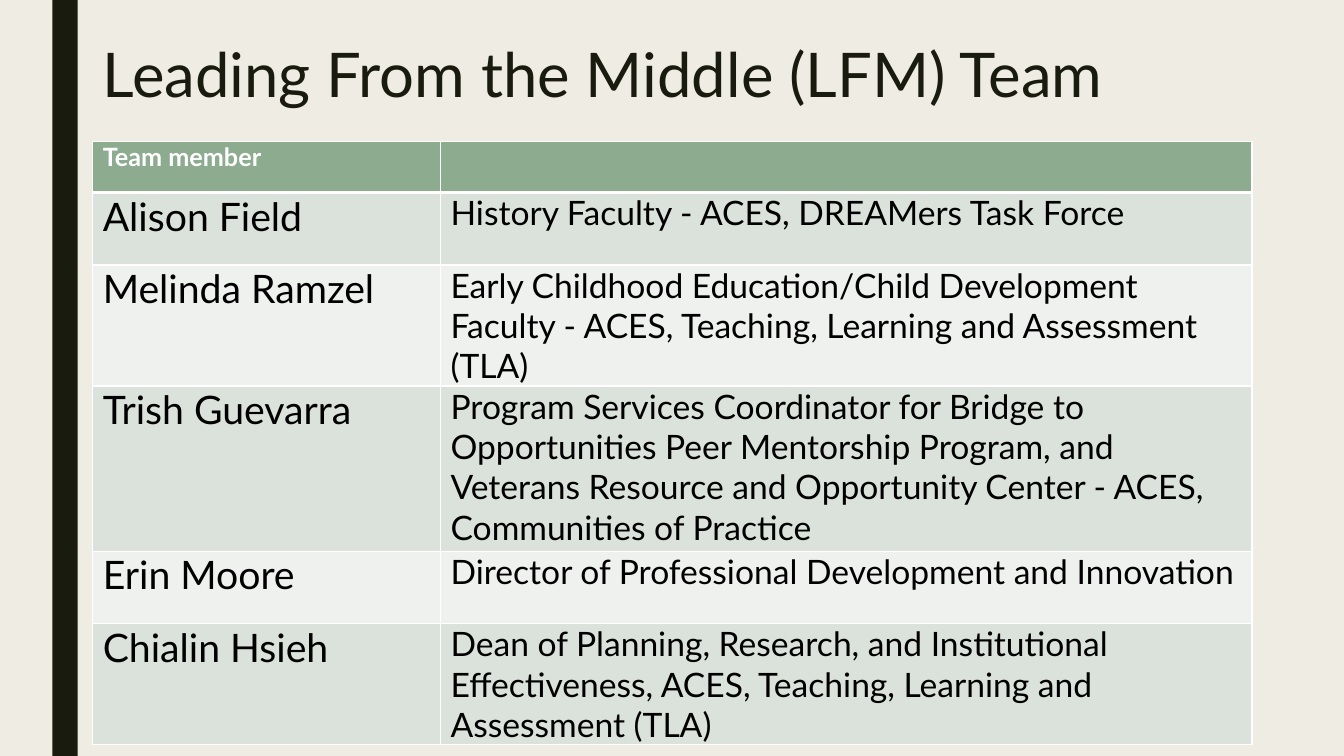
from typing import NamedTuple

from lxml.etree import SubElement
from pptx import Presentation
from pptx.dml.color import RGBColor
from pptx.enum.shapes import MSO_SHAPE as Shape
from pptx.enum.text import MSO_ANCHOR as Anchor
from pptx.oxml.ns import qn
from pptx.util import Pt

FONT = "Lato"
DARK, WHITE, BLACK = "191B0E", "FFFFFF", "000000"
HEADER_FILL = "8DAB8E"
BAND_FILLS = ("DBE2DB", "EEF1EE")
LEFT, WIDTH = 66.24, 828
NAME_WIDTH = 248.4
THIN, THICK = 1, 3


class Member(NamedTuple):
    name: str
    role: str
    height: float


HEADER = Member("Team member", "", 36.72)
MEMBERS = (
    Member("Alison Field", "History Faculty - ACES, DREAMers Task Force", 51.84),
    Member("Melinda Ramzel",
           "Early Childhood Education/Child Development Faculty - ACES, "
           "Teaching, Learning and Assessment (TLA)", 51.84),
    Member("Trish Guevarra",
           "Program Services Coordinator for Bridge to Opportunities Peer "
           "Mentorship Program, and Veterans Resource and Opportunity Center "
           "- ACES, Communities of Practice", 118.08),
    Member("Erin Moore",
           "Director of Professional Development and Innovation", 51.84),
    Member("Chialin Hsieh",
           "Dean of Planning, Research, and Institutional Effectiveness, ACES, "
           "Teaching, Learning and Assessment (TLA)", 82.08),
)


def rgb(color: str) -> RGBColor:
    return RGBColor.from_string(color)


def set_fill(fill, color: str) -> None:
    fill.solid()
    fill.fore_color.rgb = rgb(color)


def write(tf, text: str, size: float, color: str, bold: bool = False) -> None:
    tf.text = text
    tf.word_wrap = True
    for r in tf.paragraphs[0].runs:
        r.font.name = FONT
        r.font.size = Pt(size)
        r.font.bold = bold
        r.font.color.rgb = rgb(color)


def set_borders(cell, top: float, bottom: float) -> None:
    """Draw white borders; call before the fill, which must follow them in XML."""
    tc_pr = cell._tc.get_or_add_tcPr()
    sides = {"lnL": THIN, "lnR": THIN, "lnT": top, "lnB": bottom}
    for side, width in sides.items():
        line = SubElement(tc_pr, qn(f"a:{side}"), w=str(Pt(width)))
        solid = SubElement(line, qn("a:solidFill"))
        SubElement(solid, qn("a:srgbClr"), val=WHITE)


def add_side_bar(slide) -> None:
    sp = slide.shapes.add_shape(Shape.RECTANGLE, Pt(37.44), 0, Pt(18), Pt(540))
    sp.shadow.inherit = False
    set_fill(sp.fill, DARK)
    sp.line.fill.background()


def add_title(slide) -> None:
    sp = slide.shapes.add_textbox(Pt(LEFT), Pt(28.8), Pt(WIDTH), Pt(61.2))
    tf = sp.text_frame
    write(tf, "Leading From the Middle (LFM) Team", 44, DARK)
    tf.vertical_anchor = Anchor.TOP
    tf.paragraphs[0].line_spacing = 0.89


def add_team_table(slide) -> None:
    rows = (HEADER, *MEMBERS)
    table = slide.shapes.add_table(
        len(rows), 2, Pt(LEFT), Pt(100.8), Pt(WIDTH),
        Pt(sum(row.height for row in rows))).table
    table.columns[0].width = Pt(NAME_WIDTH)
    table.columns[1].width = Pt(WIDTH - NAME_WIDTH)
    for i, row in enumerate(rows):
        table.rows[i].height = Pt(row.height)
        is_header = i == 0
        fill = HEADER_FILL if is_header else BAND_FILLS[(i - 1) % 2]
        for j, (text, size) in enumerate(((row.name, 28), (row.role, 24))):
            cell = table.cell(i, j)
            cell.margin_top = cell.margin_bottom = 0
            set_borders(cell, THICK if i == 1 else THIN,
                        THICK if is_header else THIN)
            set_fill(cell.fill, fill)
            write(cell.text_frame, text, 18 if is_header else size,
                  WHITE if is_header else BLACK, bold=is_header)


def main() -> None:
    prs = Presentation()
    prs.slide_width, prs.slide_height = Pt(960), Pt(540)
    slide = prs.slides.add_slide(prs.slide_layouts[6])
    set_fill(slide.background.fill, "EFEDE3")
    add_side_bar(slide)
    add_title(slide)
    add_team_table(slide)
    prs.save("out.pptx")


if __name__ == "__main__":
    main()
